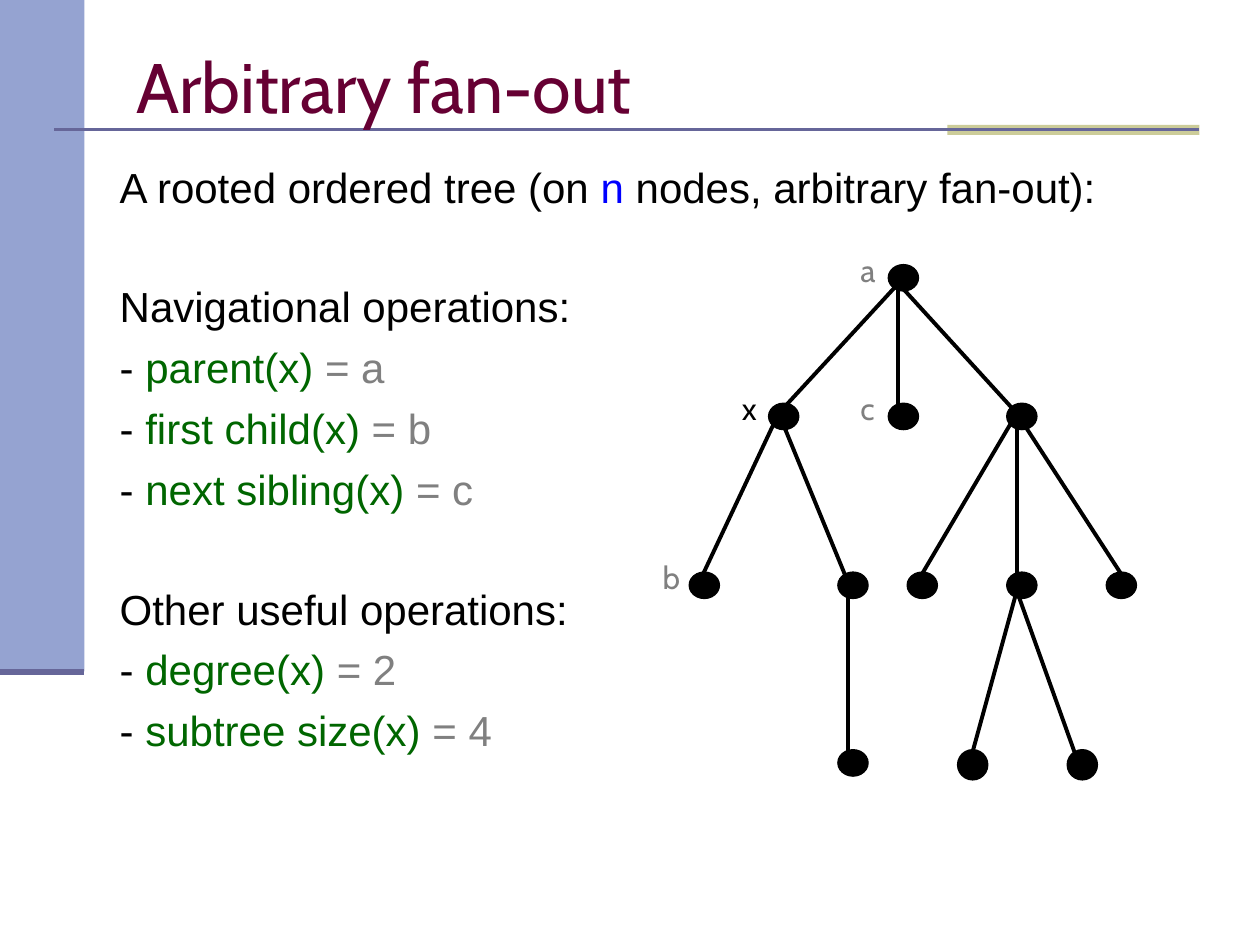
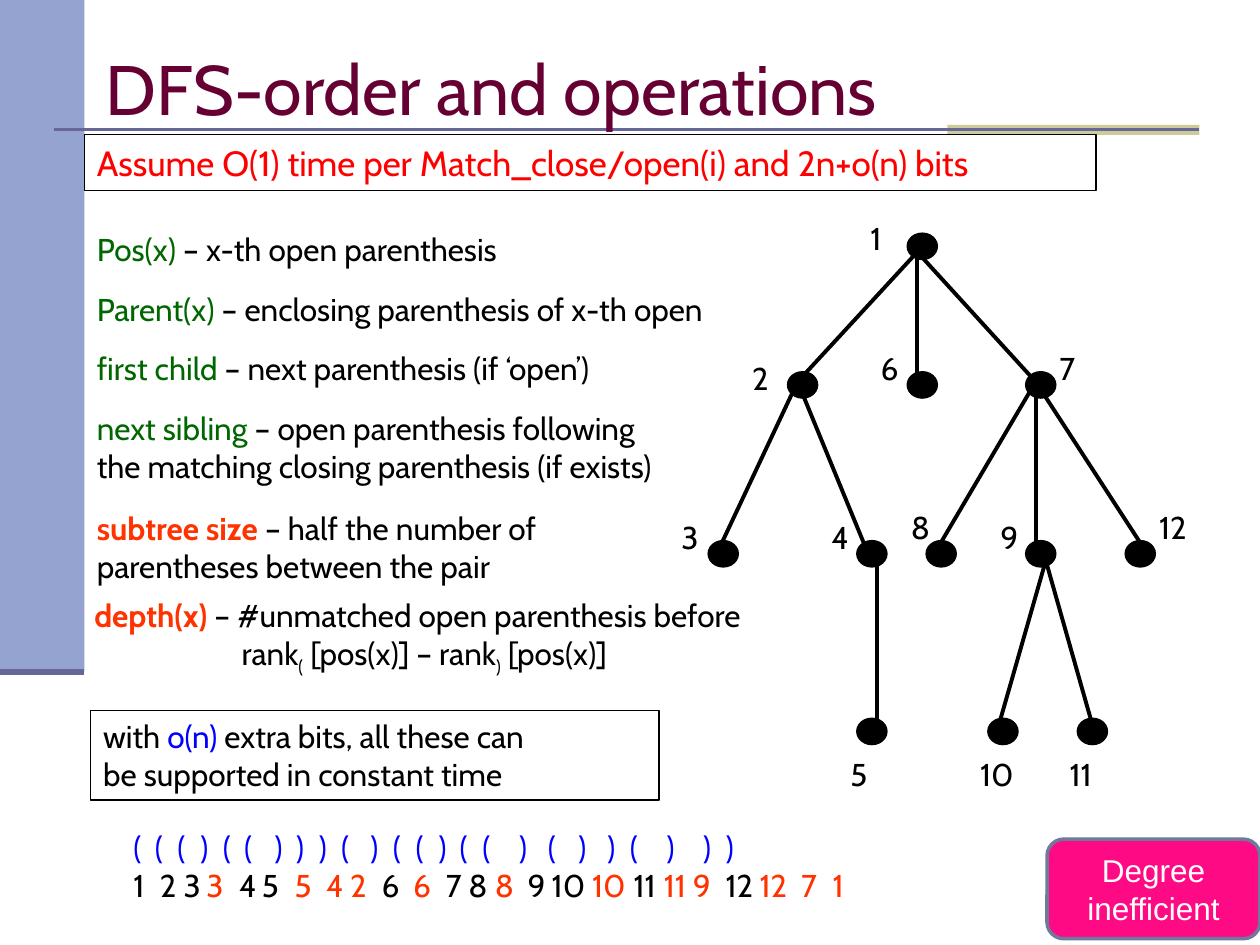
from dataclasses import dataclass, replace

import pptx
import pptx.util
import pptx.dml.color
import pptx.enum.shapes
import pptx.enum.text
import pptx.oxml
import pptx.oxml.ns
from lxml import etree

Inches = pptx.util.Inches
Pt = pptx.util.Pt
SHAPE = pptx.enum.shapes.MSO_SHAPE
ANCHOR = pptx.enum.text.MSO_ANCHOR
ALIGN = pptx.enum.text.PP_ALIGN

COLOURS = {
    "black": "000000", "white": "FFFFFF", "grey": "808080", "blue": "0000FF",
    "green": "006600", "orange": "FF3300", "red": "FF0000", "title": "660033",
    "band": "95A3D1", "rule": "666699", "accent": "CCCC99",
    "badge": "FF0A85", "badge_line": "6E799B",
}
TITLE_FONT = {"name": "Cabin", "size": Pt(40), "bold": False}
BODY_FONT = {"name": "Arial", "size": Pt(24)}
TEXT_FONT = {"name": "Cabin", "size": Pt(18)}
NOTICE_FONT = {"name": "Cabin", "size": Pt(20)}
BADGE_FONT = {"name": "Arial", "size": Pt(18)}


@dataclass(frozen=True)
class Span:
    text: str
    colour: str = "black"
    bold: bool = False
    baseline: int = 0


@dataclass(frozen=True)
class Area:
    left: float
    top: float
    width: float
    height: float

    def lengths(self) -> list:
        return [Inches(v) for v in (self.left, self.top, self.width, self.height)]


@dataclass(frozen=True)
class Node:
    """Place relative to the root, and where edges arrive and leave."""
    left: float
    top: float
    parent: str = ""
    arrive: tuple = (0.08, 0.08)
    leave: tuple = (0.08, 0.08)
    height: float = 0.21


@dataclass(frozen=True)
class Label:
    text: str
    left: float
    top: float
    colour: str = "black"


# Formatting helpers
def apply_format(target, values: dict) -> None:
    for name, value in values.items():
        setattr(target, name, value)


def rgb(colour: str):
    return pptx.dml.color.RGBColor.from_string(COLOURS[colour])


def write(frame, lines: list, font: dict, layout: dict | None = None) -> list:
    """Fill a text frame: one list of spans for each paragraph."""
    paras = []
    for number, line in enumerate(lines):
        para = frame.add_paragraph() if number else frame.paragraphs[0]
        apply_format(para, layout or {"alignment": ALIGN.LEFT})
        for span in line:
            run = para.add_run()
            run.text = span.text
            apply_format(run.font, {**font, "bold": span.bold})
            run.font.color.rgb = rgb(span.colour)
            if span.baseline:
                run._r.get_or_add_rPr().set("baseline", str(span.baseline * 1000))
        paras.append(para)
    return paras


def set_indent(para, left: float, first: float = 0) -> None:
    properties = para._p.get_or_add_pPr()
    properties.set("marL", str(Inches(left)))
    properties.set("indent", str(Inches(first)))


def set_tabs(para, stops: list) -> None:
    tabs = etree.SubElement(para._p.get_or_add_pPr(), pptx.oxml.ns.qn("a:tabLst"))
    for stop in stops:
        tab = etree.SubElement(tabs, pptx.oxml.ns.qn("a:tab"))
        tab.set("pos", str(Inches(stop)))
        tab.set("algn", "l")


# Drawing helpers
def add_shape(page, kind, area: Area, fill: str = "", line: str = "", weight: float = 0.75):
    shape = page.shapes.add_shape(kind, *area.lengths())
    shape.shadow.inherit = False
    if fill:
        shape.fill.solid()
        shape.fill.fore_color.rgb = rgb(fill)
    else:
        shape.fill.background()
    if line:
        shape.line.color.rgb = rgb(line)
        shape.line.width = Pt(weight)
    else:
        shape.line.fill.background()
    return shape


def add_line(page, start: tuple, end: tuple, colour: str, weight: float):
    line = page.shapes.add_connector(
        pptx.enum.shapes.MSO_CONNECTOR.STRAIGHT, *map(Inches, start + end))
    line.line.color.rgb = rgb(colour)
    line.line.width = Pt(weight)
    etree.SubElement(line._element.spPr, pptx.oxml.ns.qn("a:effectLst"))
    return line


def add_text(page, area: Area, lines: list, wrap: bool = True) -> list:
    box = page.shapes.add_textbox(*area.lengths())
    box.text_frame.word_wrap = wrap
    return write(box.text_frame, lines, TEXT_FONT)


def add_framed_text(page, area: Area, lines: list, font: dict) -> None:
    box = add_shape(page, SHAPE.RECTANGLE, area, line="black")
    apply_format(box.text_frame, {"word_wrap": True, "vertical_anchor": ANCHOR.TOP})
    write(box.text_frame, lines, font)


def add_tree(page, root: tuple, nodes: dict, labels: list) -> None:
    def point(node: Node, offset: tuple) -> tuple:
        return (root[0] + node.left + offset[0], root[1] + node.top + offset[1])

    for node in nodes.values():
        left, top = point(node, (0, 0))
        add_shape(page, SHAPE.OVAL, Area(left, top, 0.24, node.height), "black", "black")
        if node.parent:
            parent = nodes[node.parent]
            add_line(page, point(parent, parent.leave), point(node, node.arrive), "black", 2.25)
    for label in labels:
        width = 0.48 if len(label.text) > 1 else 0.35
        add_text(page, Area(label.left, label.top, width, 0.4),
                 [[Span(label.text, label.colour)]], wrap=False)


def add_page(deck, layout: int, title: str, left: float, top: float):
    page = deck.slides.add_slide(deck.slide_layouts[layout])
    place(page.shapes.title, Area(left, top, 8.5, 0.79))
    apply_format(page.shapes.title.text_frame, {
        "vertical_anchor": ANCHOR.MIDDLE, "auto_size": pptx.enum.text.MSO_AUTO_SIZE.NONE})
    write(page.shapes.title.text_frame, [[Span(title, "title")]], TITLE_FONT)
    return page


def place(shape, area: Area) -> None:
    apply_format(shape, dict(zip(("left", "top", "width", "height"), area.lengths())))


def move_bands_to_master(deck, page) -> None:
    """Draw the shared bands and rules, then hand them to the master."""
    bands = [
        add_shape(page, SHAPE.RECTANGLE, Area(0, 0, 0.67, 5.33), "band"),
        add_shape(page, SHAPE.RECTANGLE, Area(7.52, 0.99, 2, 0.08), "accent"),
        add_line(page, (0.43, 1.03), (9.52, 1.03), "rule", 1.5),
        add_line(page, (0, 5.33), (0.67, 5.33), "rule", 3.5),
    ]
    tree = deck.slide_master.element.cSld.spTree
    for position, band in enumerate(bands, start=2):
        tree.insert(position, band._element)


# The tree that both slides show, named by depth-first order
TREE = {
    "1": Node(0, 0, leave=(0.08, 0.15)),
    "2": Node(-0.95, 1.1, "1"),
    "3": Node(-1.58, 2.44, "2"),
    "4": Node(-0.4, 2.44, "2", leave=(0.08, 0.15)),
    "5": Node(-0.4, 3.85, "4"),
    "6": Node(0, 1.1, "1"),
    "7": Node(0.94, 1.1, "1"),
    "8": Node(0.15, 2.44, "7"),
    "9": Node(0.94, 2.44, "7", leave=(0.08, 0.15)),
    "10": Node(0.55, 3.85, "9", arrive=(0.08, 0.16), height=0.24),
    "11": Node(1.42, 3.85, "9", height=0.24),
    "12": Node(1.73, 2.44, "7", arrive=(0.16, 0.08)),
}
DFS_TREE = {
    **TREE,
    "4": replace(TREE["4"], leave=(0.16, 0.08)),
    "5": replace(TREE["5"], arrive=(0.16, 0.08)),
    "9": replace(TREE["9"], leave=(0.16, 0.16)),
    "10": Node(0.64, 3.85, "9"),
    "11": Node(1.35, 3.85, "9", arrive=(0.15, 0.16)),
}
FAN_OUT_LABELS = [
    Label("x", 5.79, 3.04), Label("a", 6.73, 1.94, "grey"),
    Label("b", 5.16, 4.38, "grey"), Label("c", 6.73, 3.04, "grey"),
]
DFS_LABELS = [
    Label("1", 6.81, 1.69), Label("2", 5.87, 2.8), Label("6", 6.89, 2.72),
    Label("7", 8.31, 2.72), Label("3", 5.31, 4.06), Label("4", 6.5, 4.06),
    Label("8", 7.13, 3.98), Label("9", 7.84, 4.06), Label("12", 9.1, 3.98),
    Label("5", 6.65, 5.94), Label("10", 7.68, 5.94), Label("11", 8.39, 5.94),
]

# Parenthesis sequence, node numbers and their column starts
PARENTHESES = "((()(()))()(()(()())()))"
VISITS = "1 2 3 3 4 5 5 4 2 6 6 7 8 8 9 10 10 11 11 9 12 12 7 1".split()
PARENTHESIS_STOPS = [0.17, 0.35, 0.53, 0.71, 0.88, 1.12, 1.29, 1.47, 1.65, 1.88, 2.06, 2.24,
                     2.42, 2.59, 2.77, 3.06, 3.29, 3.53, 3.76, 3.94, 4.23, 4.52, 4.7]
VISIT_STOPS = [0.21, 0.4, 0.58, 0.84, 1.02, 1.28, 1.53, 1.72, 1.97, 2.22, 2.48, 2.66,
               2.87, 3.13, 3.32, 3.64, 3.97, 4.21, 4.44, 4.7, 4.97, 5.3, 5.55]


def operation(name: str, result: str) -> list:
    return [Span("- "), Span(f"{name}(x) ", "green"), Span(f"= {result}", "grey")]


def build_fan_out(deck) -> None:
    page = add_page(deck, 1, "Arbitrary fan-out", 0.98, 0.28)
    move_bands_to_master(deck, page)
    body = page.placeholders[1]
    place(body, Area(0.85, 1.23, 8.98, 5.75))
    lines = [
        [Span("A rooted ordered tree (on "), Span("n", "blue"),
         Span(" nodes, arbitrary fan-out):")],
        [Span("Navigational operations:")],
        operation("parent", "a"),
        operation("first child", "b"),
        operation("next sibling", "c"),
        [Span("Other useful operations:")],
        operation("degree", "2"),
        operation("subtree size", "4"),
    ]
    paras = write(body.text_frame, lines, BODY_FONT,
                  {"alignment": ALIGN.LEFT, "space_before": Pt(6)})
    for para in paras:
        set_indent(para, 0.38, -0.38)
        etree.SubElement(para._p.get_or_add_pPr(), pptx.oxml.ns.qn("a:buNone"))
    for heading in (paras[1], paras[5]):
        heading.space_before = Pt(39.5)
    add_tree(page, (7.05, 2.1), TREE, FAN_OUT_LABELS)


def build_dfs_order(deck) -> None:
    page = add_page(deck, 5, "DFS-order and operations", 0.74, 0.3)
    add_tree(page, (7.2, 1.85), DFS_TREE, DFS_LABELS)

    # Sequence with closing visits in orange
    columns = [
        [Span("\t" * (i > 0) + mark, "blue") for i, mark in enumerate(PARENTHESES)],
        [Span("\t" * (i > 0) + visit, "orange" if PARENTHESES[i] == ")" else "black")
         for i, visit in enumerate(VISITS)],
    ]
    rows = add_text(page, Area(0.96, 6.52, 7.12, 0.71), columns)
    for row, stops in zip(rows, (PARENTHESIS_STOPS, VISIT_STOPS)):
        set_tabs(row, stops)

    # Definitions of the operations
    definitions = [
        (Area(0.67, 1.78, 5.4, 0.4),
         [[Span("Pos(x) ", "green"), Span("– x-th open parenthesis")]]),
        (Area(0.67, 2.25, 5.4, 0.4),
         [[Span("Parent(x) ", "green"), Span("– enclosing parenthesis of x-th open")]]),
        (Area(0.67, 2.72, 5.4, 0.4),
         [[Span("first child", "green"), Span(" – next parenthesis (if ‘open’)")]]),
        (Area(0.67, 3.2, 5.4, 0.71),
         [[Span("next sibling ", "green"), Span("– open parenthesis following")],
          [Span("the matching closing parenthesis (if exists)")]]),
        (Area(0.67, 3.99, 5.4, 0.71),
         [[Span("subtree size ", "orange", bold=True), Span("– half the number of")],
          [Span("parentheses between the pair")]]),
        (Area(0.65, 4.68, 5.8, 0.71),
         [[Span("depth(x)", "orange", bold=True),
           Span(" – #unmatched open parenthesis before")],
          [Span("rank"), Span("(", baseline=-25), Span(" [pos(x)] – rank"),
           Span(")", baseline=-25), Span(" [pos(x)]")]]),
    ]
    for area, lines in definitions:
        paras = add_text(page, area, lines)
    set_indent(paras[-1], 1.17)

    # Framed remarks and badge
    add_framed_text(page, Area(0.72, 5.64, 4.51, 0.71), [
        [Span("with "), Span("o(n)", "blue"), Span(" extra bits, all these can")],
        [Span("be supported in constant time")]], TEXT_FONT)
    add_framed_text(page, Area(0.67, 1.07, 8.03, 0.44), [
        [Span("Assume O(1) time per Match_close/open(i) and 2n+o(n) bits", "red")]], NOTICE_FONT)
    badge = add_shape(page, SHAPE.ROUNDED_RECTANGLE, Area(8.31, 6.66, 1.69, 0.79),
                      "badge", "badge_line", 2)
    write(badge.text_frame, [[Span("Degree", "white")], [Span("inefficient", "white")]],
          BADGE_FONT, {"alignment": ALIGN.CENTER})


def main() -> None:
    deck = pptx.Presentation()
    apply_format(deck, {"slide_width": Inches(10), "slide_height": Inches(7.5)})
    build_fan_out(deck)
    build_dfs_order(deck)
    deck.save("out.pptx")


if __name__ == "__main__":
    main()
